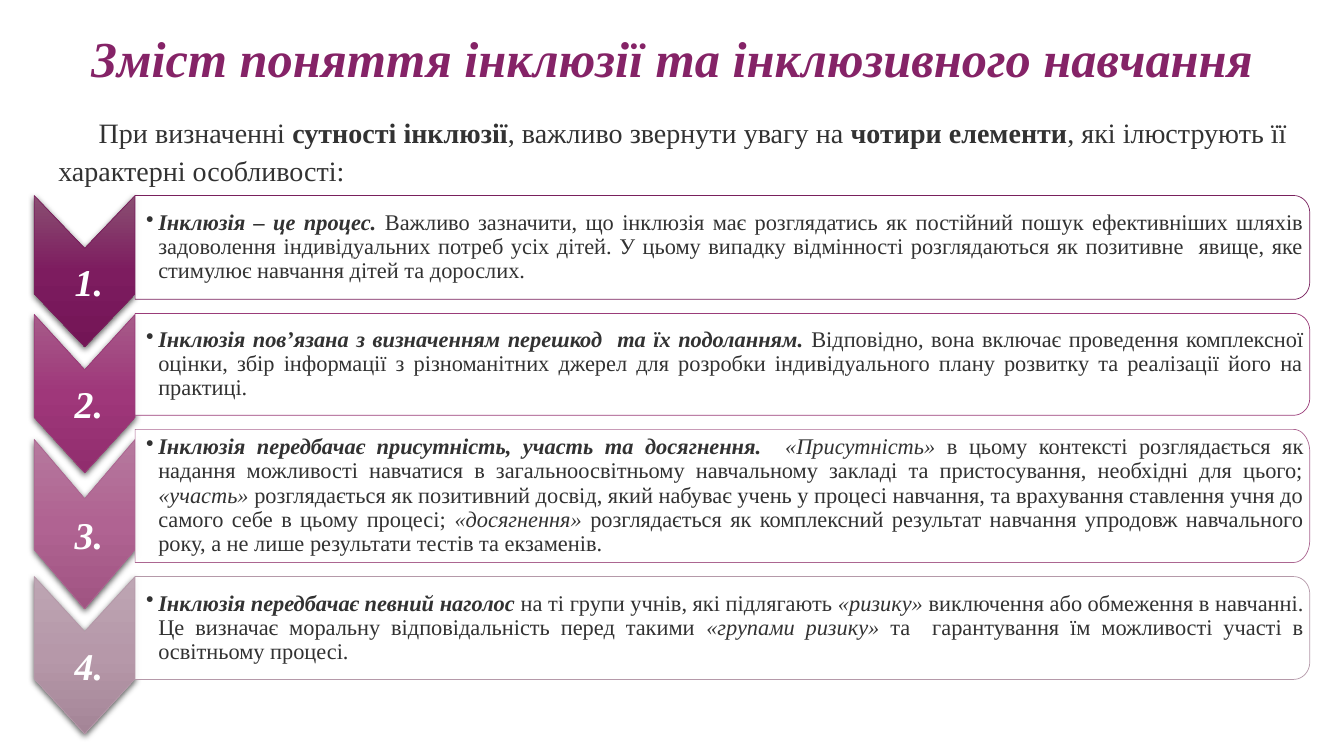
from copy import deepcopy
from math import cos, pi, sin

from lxml.etree import SubElement
from pptx import Presentation
from pptx.dml.color import RGBColor as RGB
from pptx.enum.text import MSO_ANCHOR as ANCHOR, PP_ALIGN as ALIGN
from pptx.oxml.ns import qn
from pptx.util import Pt

PX = 9144  # 100 px to the inch
FONT = "Times New Roman"
COLORS = {"title": "852367", "text": "323232", "white": "FFFFFF", "shadow": "000000"}

CHEVRON_X, CHEVRON_W = 34, 100
CARD_X, CARD_W, CORNER_W = 134, 1165, 16

INTRO = [
    ("При визначенні ", ""), ("сутності інклюзії", "b"),
    (", важливо звернути увагу на ", ""), ("чотири елементи", "b"),
    (", які ілюструють її характерні особливості:", ""),
]

# Each step: chevron (top, height), card (top, height), line, gradient, runs
STEPS = [
    ((194, 150), (194, 103), "79205D", ("8A4F72", "7D1C5F", "731556"), [
        ("Інклюзія – це процес. ", "bi"),
        ("Важливо зазначити, що інклюзія має розглядатись як постійний пошук "
         "ефективніших шляхів задоволення індивідуальних потреб усіх дітей. У цьому "
         "випадку відмінності розглядаються як позитивне  явище, яке стимулює "
         "навчання дітей та дорослих.", ""),
    ]),
    ((312, 157), (311, 101), "9A3C79", ("A65B89", "9F377A", "912D6E"), [
        ("Інклюзія пов’язана з визначенням перешкод  та їх подоланням. ", "bi"),
        ("Відповідно, вона включає проведення комплексної оцінки, збір інформації з "
         "різноманітних джерел для розробки індивідуального плану розвитку та "
         "реалізації його на практиці.", ""),
    ]),
    ((436, 168), (426, 132), "AC6691", ("B5799D", "B06392", "A05482"), [
        ("Інклюзія передбачає присутність, участь та досягнення.  ", "bi"),
        ("«Присутність» ", "i"),
        ("в цьому контексті розглядається як надання можливості навчатися в "
         "загальноосвітньому навчальному закладі та пристосування, необхідні для "
         "цього; ", ""),
        ("«участь» ", "i"),
        ("розглядається як позитивний досвід, який набуває учень у процесі навчання, "
         "та врахування ставлення учня до самого себе в цьому процесі; ", ""),
        ("«досягнення» ", "i"),
        ("розглядається як комплексний результат навчання упродовж навчального року, "
         "а не лише результати тестів та екзаменів.", ""),
    ]),
    ((572, 156), (572, 102), "B599A9", ("BDA5B3", "B698A9", "A48597"), [
        ("Інклюзія передбачає певний наголос ", "bi"),
        ("на ті групи учнів, які підлягають ", ""),
        ("«ризику» ", "i"),
        ("виключення або обмеження в навчанні. Це визначає моральну відповідальність "
         "перед такими ", ""),
        ("«групами ризику» ", "i"),
        ("та  гарантування їм можливості участі в освітньому процесі.", ""),
    ]),
]


def write(sp, runs, size, color, align=ALIGN.JUSTIFY, anchor=ANCHOR.TOP,
          insets=(10, 5, 10, 5), spacing=0.9, margin=0, indent=0, bullet=None):
    """Fill a shape with one paragraph; run styles are "b", "i" or "bi"."""
    tf = sp.text_frame
    tf.word_wrap = True
    tf.vertical_anchor = anchor
    tf.margin_left, tf.margin_top, tf.margin_right, tf.margin_bottom = (
        n * PX for n in insets)
    p = tf.paragraphs[0]
    p.alignment, p.line_spacing = align, spacing
    pPr = p._p.get_or_add_pPr()
    pPr.set("marL", str(margin * PX))
    pPr.set("indent", str(indent * PX))
    if bullet:
        SubElement(pPr, qn("a:buChar"), char=bullet)
    for text, style in runs:
        r = p.add_run()
        r.text = text
        r.font.name, r.font.size = FONT, Pt(size)
        r.font.bold, r.font.italic = "b" in style, "i" in style
        r.font.color.rgb = RGB.from_string(color)


def text_box(slide, x, y, w, h, runs, size, color, **fmt):
    sp = slide.shapes.add_textbox(x * PX, y * PX, w * PX, h * PX)
    write(sp, runs, size, color, **fmt)


def outline(slide, points, line):
    """Closed freeform through points given in px."""
    points = [(round(x * PX), round(y * PX)) for x, y in points]
    builder = slide.shapes.build_freeform(*points[0])
    builder.add_line_segments(points[1:], close=True)
    sp = builder.convert_to_shape()
    sp.shadow.inherit = False
    sp.line.color.rgb = RGB.from_string(line)
    sp.line.width = Pt(0.5)
    return sp


def add_alpha(color, percent):
    SubElement(color, qn("a:alpha"), val=str(percent * 1000))


def shade(sp, colors):
    """Three-stop gradient running from top to bottom."""
    sp.fill.gradient()
    sp.fill.gradient_angle = 270
    stops = sp._element.spPr.find(".//" + qn("a:gsLst"))
    stops.append(deepcopy(stops[-1]))
    for i, (stop, color) in enumerate(zip(sp.fill.gradient_stops, colors)):
        stop.position = i / 2
        stop.color.rgb = RGB.from_string(color)


def drop_shadow(sp):
    effects = sp._element.spPr.find(qn("a:effectLst"))
    shadow = SubElement(effects, qn("a:outerShdw"), blurRad=str(Pt(4.5)),
                        dist=str(Pt(1.5)), dir="5400000", rotWithShape="0")
    add_alpha(SubElement(shadow, qn("a:srgbClr"), val=COLORS["shadow"]), 63)


def chevron(slide, top, height, label, line, colors):
    left, right, mid = CHEVRON_X, CHEVRON_X + CHEVRON_W, CHEVRON_X + CHEVRON_W / 2
    notch, bottom = 0.35 * height, top + height
    sp = outline(slide, [(right, top), (right, bottom - notch), (mid, bottom),
                         (left, bottom - notch), (left, top), (mid, top + notch)], line)
    shade(sp, colors)
    drop_shadow(sp)
    write(sp, [(label, "bi")], 27, COLORS["white"], anchor=ANCHOR.MIDDLE,
          insets=(40, 26, 2, 0))


def card(slide, top, height, line, runs):
    """Box whose two right corners are rounded."""
    corner_h, bottom = height / 6, top + height
    arc_x = CARD_X + CARD_W - CORNER_W
    angles = [i * pi / 24 for i in range(13)]
    upper = [(arc_x + CORNER_W * sin(a), top + corner_h * (1 - cos(a))) for a in angles]
    lower = [(x, top + bottom - y) for x, y in reversed(upper)]
    sp = outline(slide, [(CARD_X, top), *upper, *lower, (CARD_X, bottom)], line)
    sp.fill.solid()
    sp.fill.fore_color.rgb = RGB.from_string(COLORS["white"])
    add_alpha(sp._element.spPr.find(qn("a:solidFill"))[0], 90)
    write(sp, runs, 16, COLORS["text"], anchor=ANCHOR.MIDDLE, insets=(11, 6, 6, 6),
          margin=12, indent=-12, bullet="•")


def main():
    prs = Presentation()
    prs.slide_width, prs.slide_height = 1333 * PX, 750 * PX
    slide = prs.slides.add_slide(prs.slide_layouts[6])

    # Title and introduction
    text_box(slide, 48, 28, 1238, 65,
             [("Зміст поняття інклюзії та інклюзивного навчання", "bi")],
             36, COLORS["title"], align=ALIGN.CENTER, anchor=ANCHOR.BOTTOM)
    text_box(slide, 48, 105, 1238, 84, INTRO, 20, COLORS["text"],
             spacing=1.14, indent=40)

    # Numbered steps
    for number, (arrow, box, line, colors, runs) in enumerate(STEPS, 1):
        chevron(slide, *arrow, f"{number}.", line, colors)
        card(slide, *box, line, runs)

    prs.save("out.pptx")


if __name__ == "__main__":
    main()
